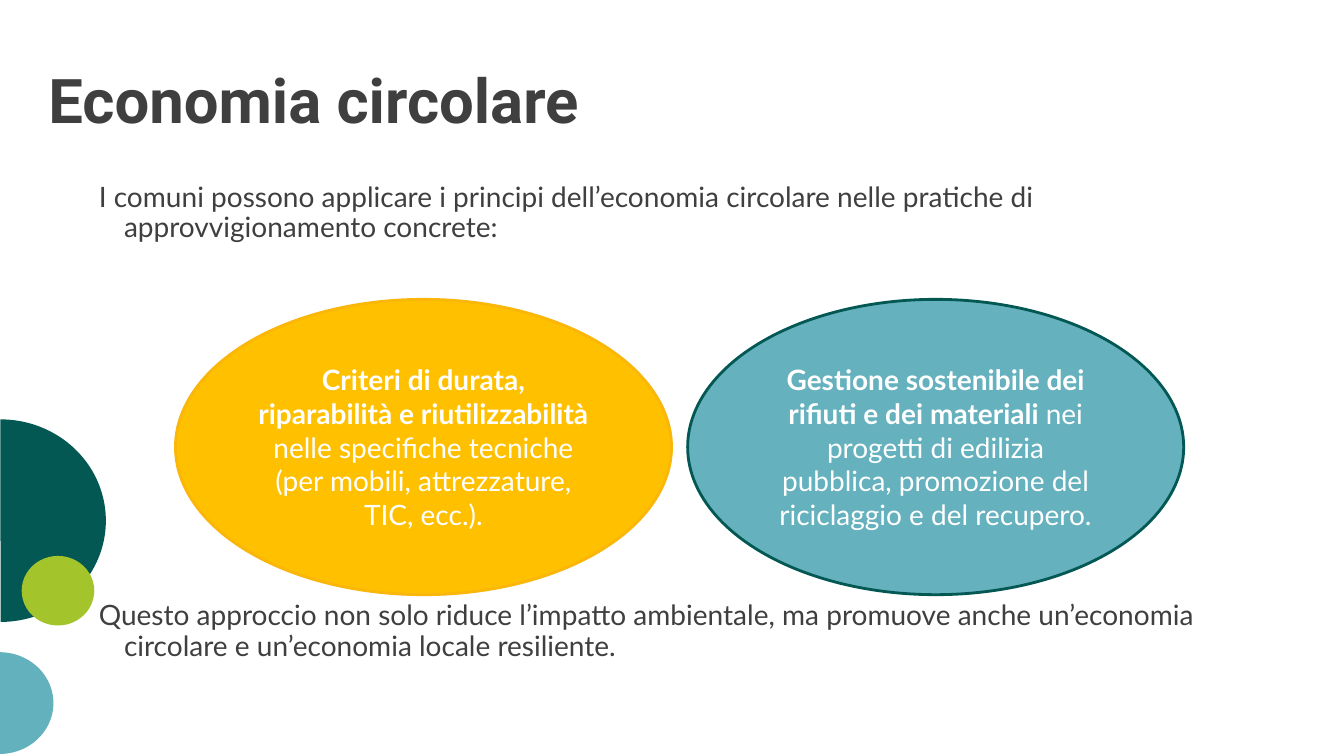
from pptx import Presentation
from pptx.dml.color import RGBColor
from pptx.enum import shapes, text
from pptx.util import Inches, Pt

# Content
TITLE = "Economia circolare"
STATEMENTS = [  # top, wording
    (1.82, "I comuni possono applicare i principi dell’economia circolare nelle pratiche di "
           "approvvigionamento concrete:"),
    (5.97, "Questo approccio non solo riduce l’impatto ambientale, ma promuove anche "
           "un’economia circolare e un’economia locale resiliente."),
]
PRACTICES = [  # bold part, plain part, fill, outline
    ("Criteri di durata, riparabilità e riutilizzabilità ",
     "nelle specifiche tecniche (per mobili, attrezzature, TIC, ecc.).",
     "FFC000", "FAB609"),
    ("Gestione sostenibile dei rifiuti e dei materiali ",
     "nei progetti di edilizia pubblica, promozione del riciclaggio e del recupero.",
     "65B1BE", "035854"),
]
HALF_DISCS = [  # box, end angle, fill
    ((-1, 4.12, 2.01, 2.09), 107.96, "035854"),
    ((-0.51, 6.44, 1.01, 1.07), 108.52, "64B1BE"),
]
SMALL_DISC = (0.23, 5.5, 0.69, 0.72)
INK, WHITE, GREEN = "3F3F3F", "FFFFFF", "A3C42A"
OVAL_LEFT, OVAL_TOP, OVAL_W, OVAL_H, OVAL_STEP = 1.74, 2.97, 4.92, 2.93, 5.08

prs = Presentation()
prs.slide_width, prs.slide_height = Inches(13.33), Inches(7.5)
slide = prs.slides.add_slide(prs.slide_layouts[6])


def color(value):
    return RGBColor.from_string(value)


def style(run, size, font, ink, bold=False):
    run.font.size, run.font.name, run.font.bold = Pt(size), font, bold
    run.font.color.rgb = color(ink)


def add_solid(kind, box, fill, outline=None):
    solid = slide.shapes.add_shape(kind, *map(Inches, box))
    solid.shadow.inherit = False
    solid.fill.solid()
    solid.fill.fore_color.rgb = color(fill)
    if outline:
        solid.line.color.rgb = color(outline)
        solid.line.width = Pt(2)
    else:
        solid.line.fill.background()
    return solid


def add_text(box, wording, size, font, spacing, bold=False):
    frame = slide.shapes.add_textbox(*map(Inches, box)).text_frame
    frame.word_wrap = True
    frame.margin_left = frame.margin_top = frame.margin_right = frame.margin_bottom = 0
    paragraph = frame.paragraphs[0]
    paragraph.text = wording
    paragraph.line_spacing = spacing
    style(paragraph.runs[0], size, font, INK, bold)
    return frame


# Discs on the left edge
for box, end_angle, fill in HALF_DISCS:
    half_disc = add_solid(shapes.MSO_SHAPE.PIE, box, fill)
    half_disc.adjustments[0] = 0
    half_disc.adjustments[1] = end_angle
    half_disc.rotation = 270
add_solid(shapes.MSO_SHAPE.OVAL, SMALL_DISC, GREEN).rotation = 270

# Title
title = add_text((0.48, 0, 12.38, 1.34), TITLE, 44, "Roboto", 0.8, True)
title.vertical_anchor = text.MSO_ANCHOR.BOTTOM

# Statements with hanging indent
for top, wording in STATEMENTS:
    statement = add_text((0.73, top, 11.81, 0.7), wording, 20, "Lato", 0.9)
    indent = statement.paragraphs[0]._p.get_or_add_pPr()
    indent.set("marL", str(Inches(0.5)))
    indent.set("indent", str(Inches(-0.25)))

# Practices in ovals
for i, (lead, rest, fill, outline) in enumerate(PRACTICES):
    box = (OVAL_LEFT + i * OVAL_STEP, OVAL_TOP, OVAL_W, OVAL_H)
    practice = add_solid(shapes.MSO_SHAPE.OVAL, box, fill, outline).text_frame
    practice.word_wrap = True
    practice.vertical_anchor = text.MSO_ANCHOR.MIDDLE
    paragraph = practice.paragraphs[0]
    paragraph.alignment = text.PP_ALIGN.CENTER
    for wording, bold in ((lead, True), (rest, False)):
        run = paragraph.add_run()
        run.text = wording
        style(run, 20, "Lato", WHITE, bold)

prs.save("out.pptx")
